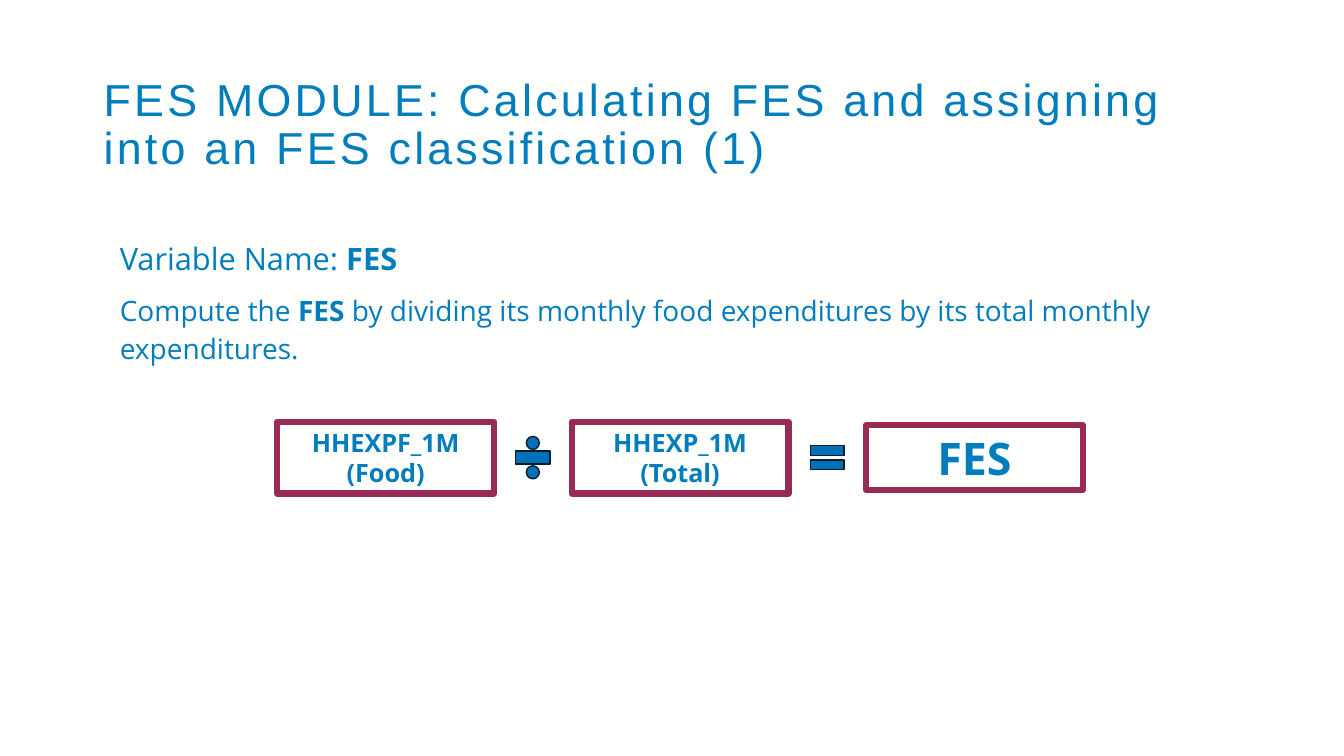
"""Build the slide that explains how FES is calculated."""
from pptx import Presentation
from pptx.dml.color import RGBColor
from pptx.enum.shapes import MSO_SHAPE
from pptx.enum.text import MSO_ANCHOR, MSO_AUTO_SIZE, PP_ALIGN
from pptx.util import Inches, Pt

PAPER = RGBColor(0xFF, 0xFF, 0xFE)
BLUE = RGBColor(0x00, 0x7D, 0xBC)
SYMBOL_BLUE = RGBColor(0x00, 0x70, 0xBA)
SYMBOL_EDGE = RGBColor(0x0B, 0x1C, 0x2B)
PLUM = RGBColor(0x98, 0x2B, 0x56)

TITLE = [[("FES MODULE: Calculating FES and assigning into an FES classification (1)", False)]]
VARIABLE = [[("Variable Name: ", False), ("FES", True)]]
METHOD = [[
    ("Compute the ", False),
    ("FES", True),
    (" by dividing its monthly food expenditures by its total monthly expenditures.", False),
]]
TERMS = [
    (["HHEXPF_1M", "(Food)"], 18, 0.71),
    (["HHEXP_1M", "(Total)"], 18, 0.71),
    (["FES"], 32, 0.64),
]
OPERATORS = [
    (MSO_SHAPE.MATH_DIVIDE, 0.46, 0.55),
    (MSO_SHAPE.MATH_EQUAL, 0.45, 0.4),
]

SLIDE_WIDTH, SLIDE_HEIGHT = 13.33, 7.5
TEXT_LEFT, TEXT_WIDTH, TEXT_HEIGHT = 1.09, 11.53, 4.48
FORMULA_LEFT, FORMULA_MIDDLE = 2.75, 4.54
TERM_WIDTH, TERM_GAP = 2.15, 0.77
TERM_PITCH = TERM_WIDTH + TERM_GAP


def write_text(shape, paragraphs, size, font="Open Sans", align=PP_ALIGN.LEFT,
               anchor=MSO_ANCHOR.TOP, line_spacing=1.0, space_after=0, tracking=0):
    frame = shape.text_frame
    frame.word_wrap = True
    frame.vertical_anchor = anchor
    for index, spans in enumerate(paragraphs):
        para = frame.add_paragraph() if index else frame.paragraphs[0]
        para.alignment = align
        para.line_spacing = line_spacing
        para.space_after = Pt(space_after)
        for text, bold in spans:
            span = para.add_run()
            span.text = text
            span.font.name = font
            span.font.size = Pt(size)
            span.font.bold = bold
            span.font.color.rgb = BLUE
            if tracking:
                span.font._element.set("spc", str(round(tracking * 100)))
    return frame


def add_text(page, left, top, height, paragraphs, **style):
    box = page.shapes.add_textbox(Inches(left), Inches(top), Inches(TEXT_WIDTH), Inches(height))
    return write_text(box, paragraphs, **style)


def add_centred(page, kind, centre, width, height, edge, weight):
    shape = page.shapes.add_shape(
        kind, Inches(centre - width / 2), Inches(FORMULA_MIDDLE - height / 2),
        Inches(width), Inches(height))
    shape.shadow.inherit = False
    shape.line.color.rgb = edge
    shape.line.width = Pt(weight)
    return shape


def add_formula(page):
    first_centre = FORMULA_LEFT + TERM_WIDTH / 2
    for index, (lines, size, height) in enumerate(TERMS):
        centre = first_centre + index * TERM_PITCH
        term = add_centred(page, MSO_SHAPE.RECTANGLE, centre, TERM_WIDTH, height, PLUM, 4.5)
        term.fill.background()
        frame = write_text(term, [[(line, True)] for line in lines], size=size,
                           align=PP_ALIGN.CENTER, anchor=MSO_ANCHOR.MIDDLE)
        frame.auto_size = MSO_AUTO_SIZE.SHAPE_TO_FIT_TEXT
    for index, (kind, width, height) in enumerate(OPERATORS):
        centre = first_centre + (index + 0.5) * TERM_PITCH
        symbol = add_centred(page, kind, centre, width, height, SYMBOL_EDGE, 1)
        symbol.fill.solid()
        symbol.fill.fore_color.rgb = SYMBOL_BLUE


def main():
    deck = Presentation()
    deck.slide_width, deck.slide_height = Inches(SLIDE_WIDTH), Inches(SLIDE_HEIGHT)
    page = deck.slides.add_slide(deck.slide_layouts[6])
    page.background.fill.solid()
    page.background.fill.fore_color.rgb = PAPER
    title = add_text(page, 0.93, 0.86, 1.26, TITLE, size=32, font="Arial",
                     anchor=MSO_ANCHOR.MIDDLE, line_spacing=0.9, tracking=2.3)
    title.margin_bottom = Inches(0.53)
    for top, paragraphs, size in [(2.81, METHOD, 20), (2.27, VARIABLE, 22)]:
        add_text(page, TEXT_LEFT, top, TEXT_HEIGHT, paragraphs, size=size,
                 line_spacing=1.15, space_after=10)
    add_formula(page)
    deck.save("out.pptx")


if __name__ == "__main__":
    main()
